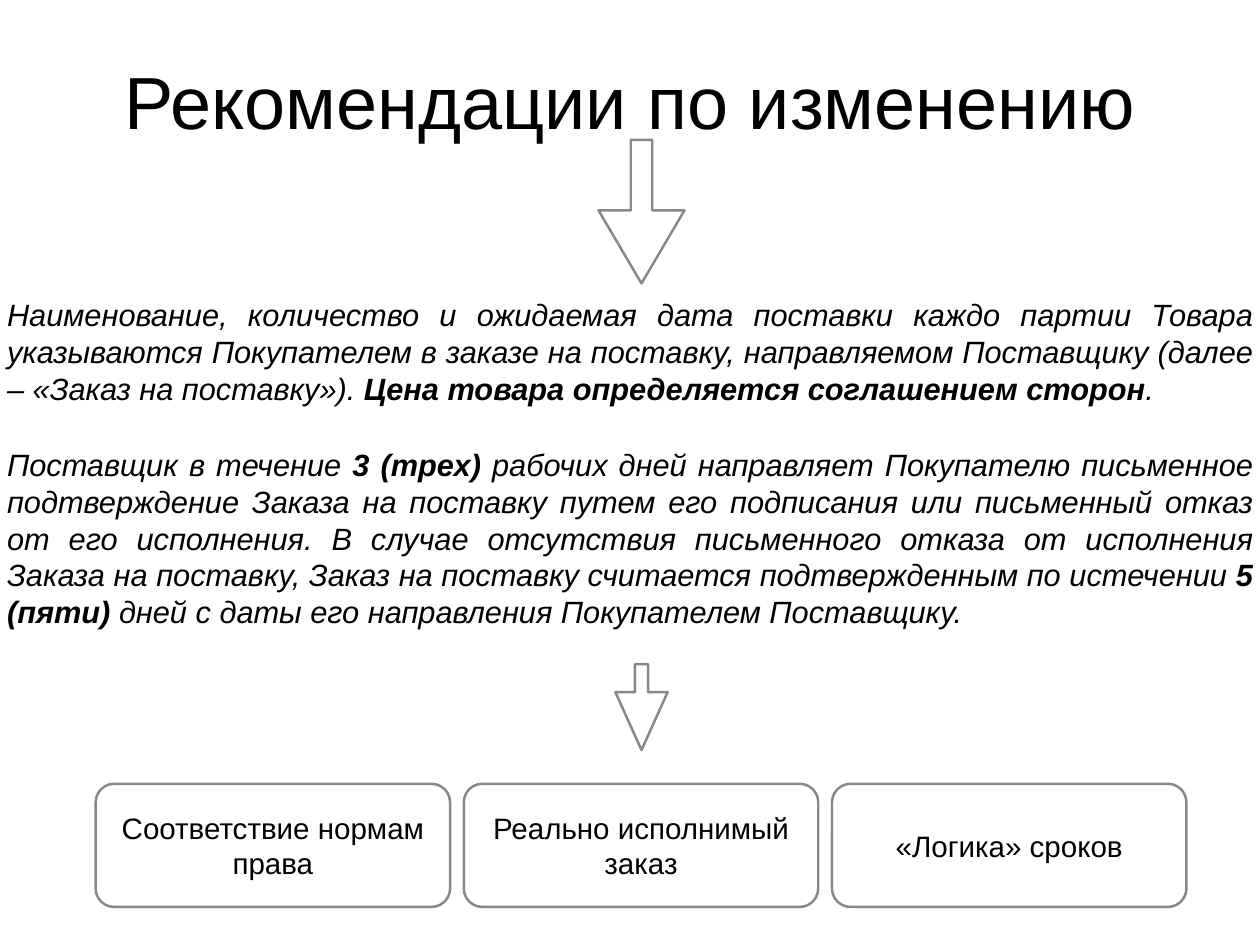
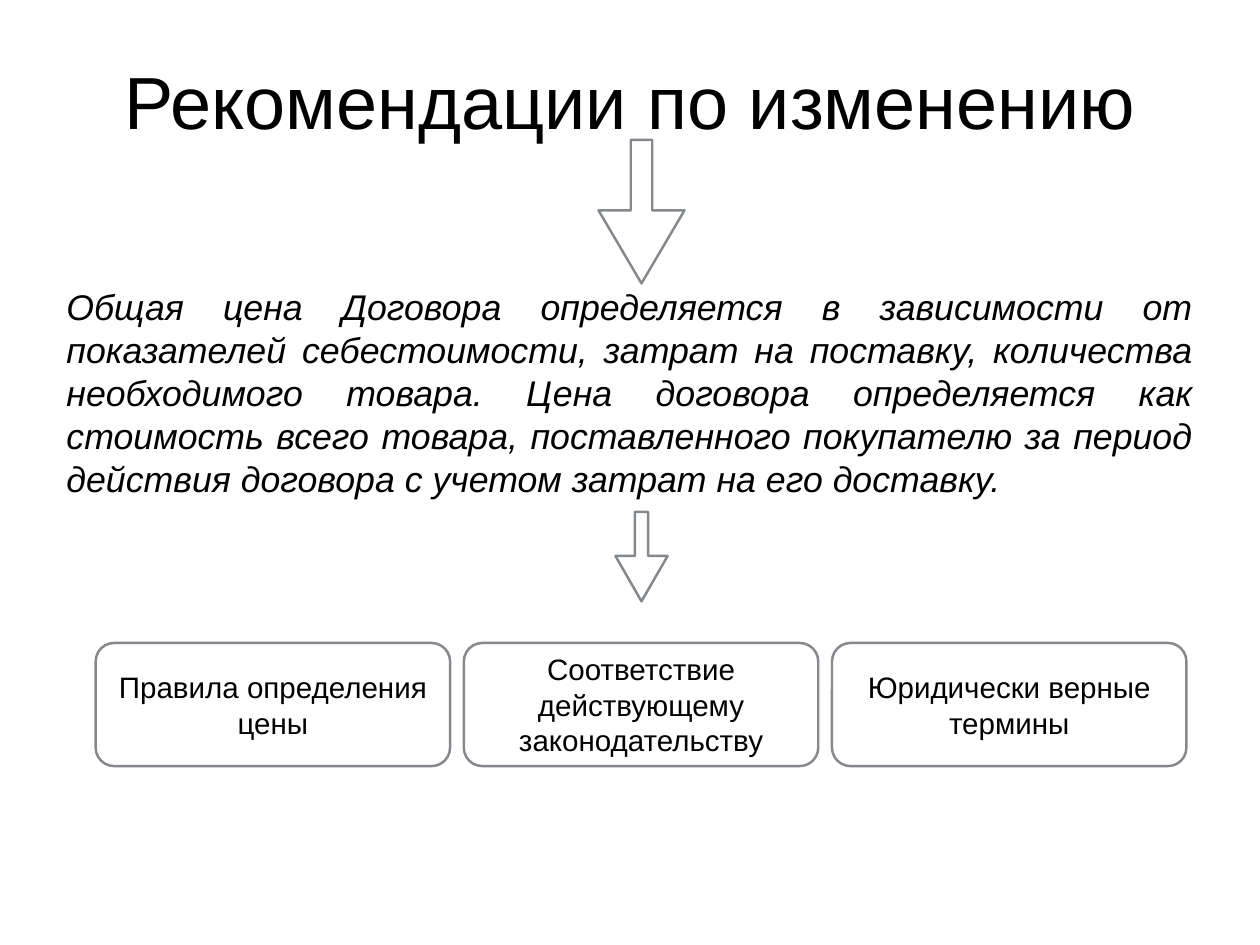
"""Build two slides of contract wording recommendations."""
from pptx import Presentation
from pptx.dml.color import RGBColor
from pptx.enum.shapes import MSO_SHAPE
from pptx.enum.text import MSO_ANCHOR, MSO_AUTO_SIZE, PP_ALIGN
from pptx.util import Inches, Pt

COLORS = {"text": "000000", "outline": "85888D"}
FONT = "Arial"
TITLE = "Рекомендации по изменению"
SLIDE_WIDTH, SLIDE_HEIGHT = 14.22, 10.67
ARROW_CENTER = 7.24
BENEFIT_LEFT, BENEFIT_STEP = 1.08, 4.155
BENEFIT_WIDTH, BENEFIT_HEIGHT = 4, 1.39

# Each clause paragraph alternates regular and bold pieces.
RECOMMENDATIONS = [
    {
        "clause": [
            ["Наименование, количество и ожидаемая дата поставки каждо партии Товара "
             "указываются Покупателем в заказе на поставку, направляемом Поставщику "
             "(далее – «Заказ на поставку»). ",
             "Цена товара определяется соглашением сторон", "."],
            ["Поставщик в течение ", "3 (трех)",
             " рабочих дней направляет Покупателю письменное подтверждение Заказа на "
             "поставку путем его подписания или письменный отказ от его исполнения. "
             "В случае отсутствия письменного отказа от исполнения Заказа на поставку, "
             "Заказ на поставку считается подтвержденным по истечении ", "5 (пяти)",
             " дней с даты его направления Покупателем Поставщику."],
        ],
        "clause_box": (0.02, 3.28, 14.18, 3.89),
        "clause_size": 25,
        "lower_arrow": (7.5, 0.59, 0.97, 1.11),
        "benefits": ["Соответствие нормам права", "Реально исполнимый заказ",
                     "«Логика» сроков"],
        "benefits_top": 8.85,
    },
    {
        "clause": [
            ["Общая цена Договора определяется в зависимости от показателей "
             "себестоимости, затрат на поставку, количества необходимого товара. Цена "
             "договора определяется как стоимость всего товара, поставленного "
             "покупателю за период действия договора с учетом затрат на его доставку."],
        ],
        "clause_box": (0.69, 3.16, 12.84, 2.54),
        "clause_size": 29,
        "lower_arrow": (5.78, 0.59, 1.01, 0.87),
        "benefits": ["Правила определения цены",
                     "Соответствие действующему законодательству",
                     "Юридически верные термины"],
        "benefits_top": 7.26,
    },
]
UPPER_ARROW = (1.58, 0.97, 1.62, 0.85)


def set_frame(frame, auto_size=MSO_AUTO_SIZE.NONE):
    frame.word_wrap = True
    frame.auto_size = auto_size
    frame.vertical_anchor = MSO_ANCHOR.MIDDLE
    frame.margin_left = frame.margin_right = Inches(0.06)
    frame.margin_top = frame.margin_bottom = Inches(0.06)


def set_paragraph(paragraph, size, align=PP_ALIGN.CENTER):
    paragraph.alignment = align
    paragraph.font.name = FONT
    paragraph.font.size = Pt(size)
    paragraph.font.color.rgb = RGBColor.from_string(COLORS["text"])


def add_title(slide):
    title = slide.shapes.title
    title.left, title.top, title.width, title.height = map(
        Inches, (1.04, 0.49, 12.14, 1.27))
    title.text_frame.text = TITLE
    set_frame(title.text_frame)
    set_paragraph(title.text_frame.paragraphs[0], 60)


def add_outline(slide, preset, box, adjustments):
    outline = slide.shapes.add_shape(preset, *map(Inches, box))
    outline.shadow.inherit = False
    outline.fill.background()
    outline.line.color.rgb = RGBColor.from_string(COLORS["outline"])
    outline.line.width = Pt(2)
    for index, value in enumerate(adjustments):
        outline.adjustments[index] = value
    return outline


def add_arrow(slide, top, width, height, head):
    add_outline(slide, MSO_SHAPE.DOWN_ARROW,
                (ARROW_CENTER - width / 2, top, width, height), (0.25, head))


def add_clause(slide, clause, box, size):
    frame = slide.shapes.add_textbox(*map(Inches, box)).text_frame
    set_frame(frame, MSO_AUTO_SIZE.SHAPE_TO_FIT_TEXT)
    for index, pieces in enumerate(clause):
        paragraph = frame.add_paragraph() if index else frame.paragraphs[0]
        set_paragraph(paragraph, size, PP_ALIGN.JUSTIFY)
        paragraph.font.italic = True
        paragraph.space_before = Pt(32)
        for position, piece in enumerate(pieces):
            run = paragraph.add_run()
            run.text = piece
            if position % 2:
                run.font.bold = True


def add_benefits(slide, benefits, top):
    for index, benefit in enumerate(benefits):
        left = BENEFIT_LEFT + index * BENEFIT_STEP
        box = (left, top, BENEFIT_WIDTH, BENEFIT_HEIGHT)
        frame = add_outline(slide, MSO_SHAPE.ROUNDED_RECTANGLE, box, (0.15,)).text_frame
        frame.text = benefit
        set_frame(frame)
        set_paragraph(frame.paragraphs[0], 24)


def main():
    deck = Presentation()
    deck.slide_width, deck.slide_height = Inches(SLIDE_WIDTH), Inches(SLIDE_HEIGHT)
    for item in RECOMMENDATIONS:
        slide = deck.slides.add_slide(deck.slide_layouts[5])
        add_title(slide)
        add_arrow(slide, *UPPER_ARROW)
        add_clause(slide, item["clause"], item["clause_box"], item["clause_size"])
        add_arrow(slide, *item["lower_arrow"])
        add_benefits(slide, item["benefits"], item["benefits_top"])
    deck.save("out.pptx")


if __name__ == "__main__":
    main()
